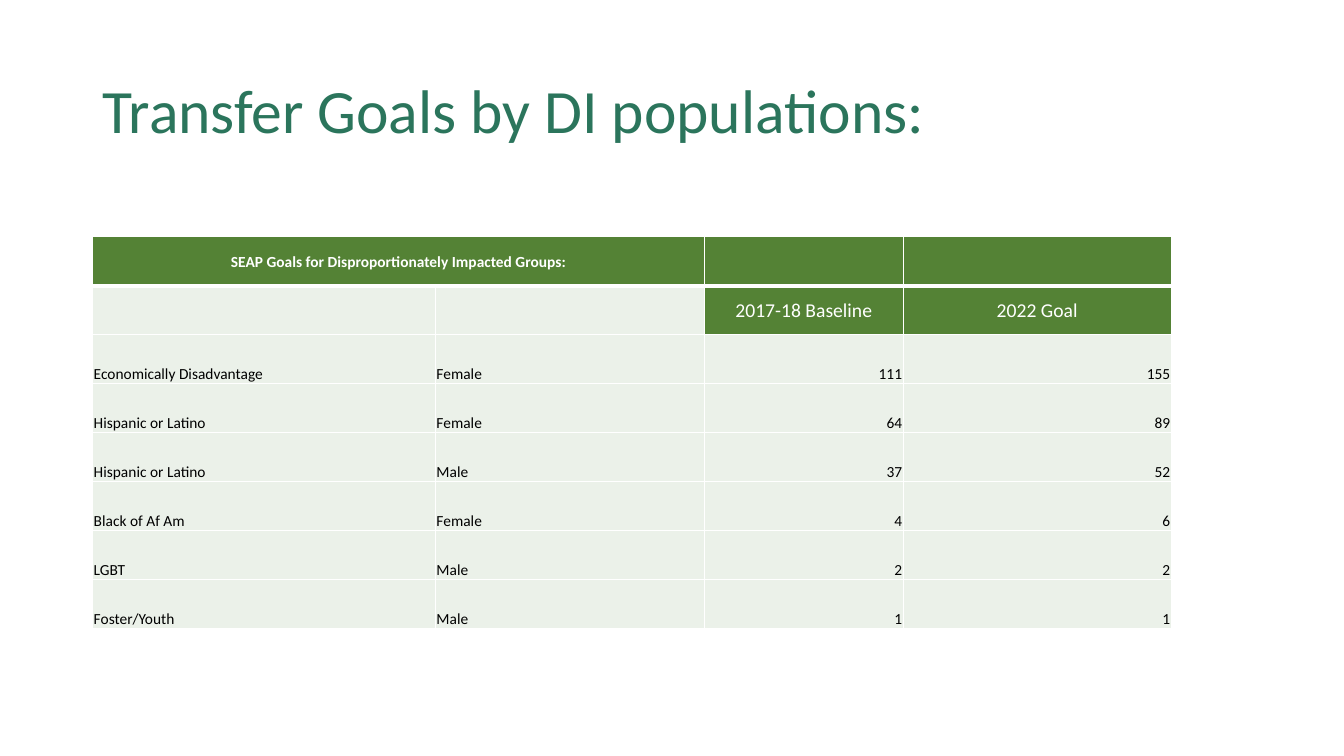
import pptx
import pptx.dml.color
import pptx.enum.text
import pptx.oxml
import pptx.oxml.ns
import pptx.util
from pptx.util import Inches

ALIGN = pptx.enum.text.PP_ALIGN
ANCHOR = pptx.enum.text.MSO_ANCHOR
GREEN, PALE, WHITE, BLACK = "548235", "EBF1E9", "FFFFFF", "000000"

COLUMN_WIDTHS = [3.4, 2.67, 1.97, 2.66]
ROW_HEIGHT = 0.486
ROWS = [
    ["SEAP Goals for Disproportionately Impacted Groups:", "", "", ""],
    ["", "", "2017-18 Baseline", "2022 Goal"],
    ["Economically Disadvantage", "Female", "111", "155"],
    ["Hispanic or Latino", "Female", "64", "89"],
    ["Hispanic or Latino", "Male", "37", "52"],
    ["Black of Af Am", "Female", "4", "6"],
    ["LGBT", "Male", "2", "2"],
    ["Foster/Youth", "Male", "1", "1"],
]


def format_paragraph(paragraph, size, color, bold=False):
    """Set the font of every run in a paragraph."""
    for run in paragraph.runs:
        run.font.name = "Calibri"
        run.font.size = pptx.util.Pt(size)
        run.font.bold = bold
        run.font.color.rgb = pptx.dml.color.RGBColor.from_string(color)


def add_border(cell, side, points):
    """Draw a white line on one side (L, R, T or B) of a cell."""
    cell._tc.get_or_add_tcPr().append(pptx.oxml.parse_xml(
        f'<a:ln{side} {pptx.oxml.ns.nsdecls("a")} w="{points * 12700}">'
        f'<a:solidFill><a:srgbClr val="{WHITE}"/></a:solidFill></a:ln{side}>'))


presentation = pptx.Presentation()
presentation.slide_width = Inches(13.333)
presentation.slide_height = Inches(7.5)
slide = presentation.slides.add_slide(presentation.slide_layouts[6])

title = slide.shapes.add_textbox(Inches(0.92), Inches(0.4), Inches(11.5), Inches(1.45))
title.text_frame.word_wrap = True
title.text_frame.vertical_anchor = ANCHOR.MIDDLE
title.text_frame.text = "Transfer Goals by DI populations:"
title.text_frame.paragraphs[0].line_spacing = 0.9
format_paragraph(title.text_frame.paragraphs[0], 44, "2B755C")

table = slide.shapes.add_table(
    len(ROWS), len(COLUMN_WIDTHS), Inches(0.92), Inches(2.35),
    Inches(sum(COLUMN_WIDTHS)), Inches(ROW_HEIGHT * len(ROWS))).table
table.first_row = table.horz_banding = False
for column, width in zip(table.columns, COLUMN_WIDTHS):
    column.width = Inches(width)
for row in table.rows:
    row.height = Inches(ROW_HEIGHT)
table.cell(0, 0).merge(table.cell(0, 1))

for row_index, texts in enumerate(ROWS):
    for column_index, text in enumerate(texts):
        cell = table.cell(row_index, column_index)
        is_number_column = column_index >= 2
        is_header = row_index == 0 or (row_index == 1 and is_number_column)

        # The line under the first row is heavier than the grid
        for side in "LRTB":
            under_first_row = (row_index, side) in [(0, "B"), (1, "T")]
            add_border(cell, side, 3 if under_first_row else 1)
        cell.fill.solid()
        cell.fill.fore_color.rgb = pptx.dml.color.RGBColor.from_string(
            GREEN if is_header else PALE)
        if not text:
            continue

        cell.text_frame.text = text
        cell.margin_left = cell.margin_right = cell.margin_top = Inches(0.01)
        cell.margin_bottom = 0
        paragraph = cell.text_frame.paragraphs[0]
        if is_header:
            cell.vertical_anchor = ANCHOR.MIDDLE
            paragraph.alignment = ALIGN.CENTER
            format_paragraph(paragraph, 11 if row_index == 0 else 14, WHITE, row_index == 0)
        else:
            cell.vertical_anchor = ANCHOR.BOTTOM
            paragraph.alignment = ALIGN.RIGHT if is_number_column else ALIGN.LEFT
            format_paragraph(paragraph, 11, BLACK)

presentation.save("out.pptx")
